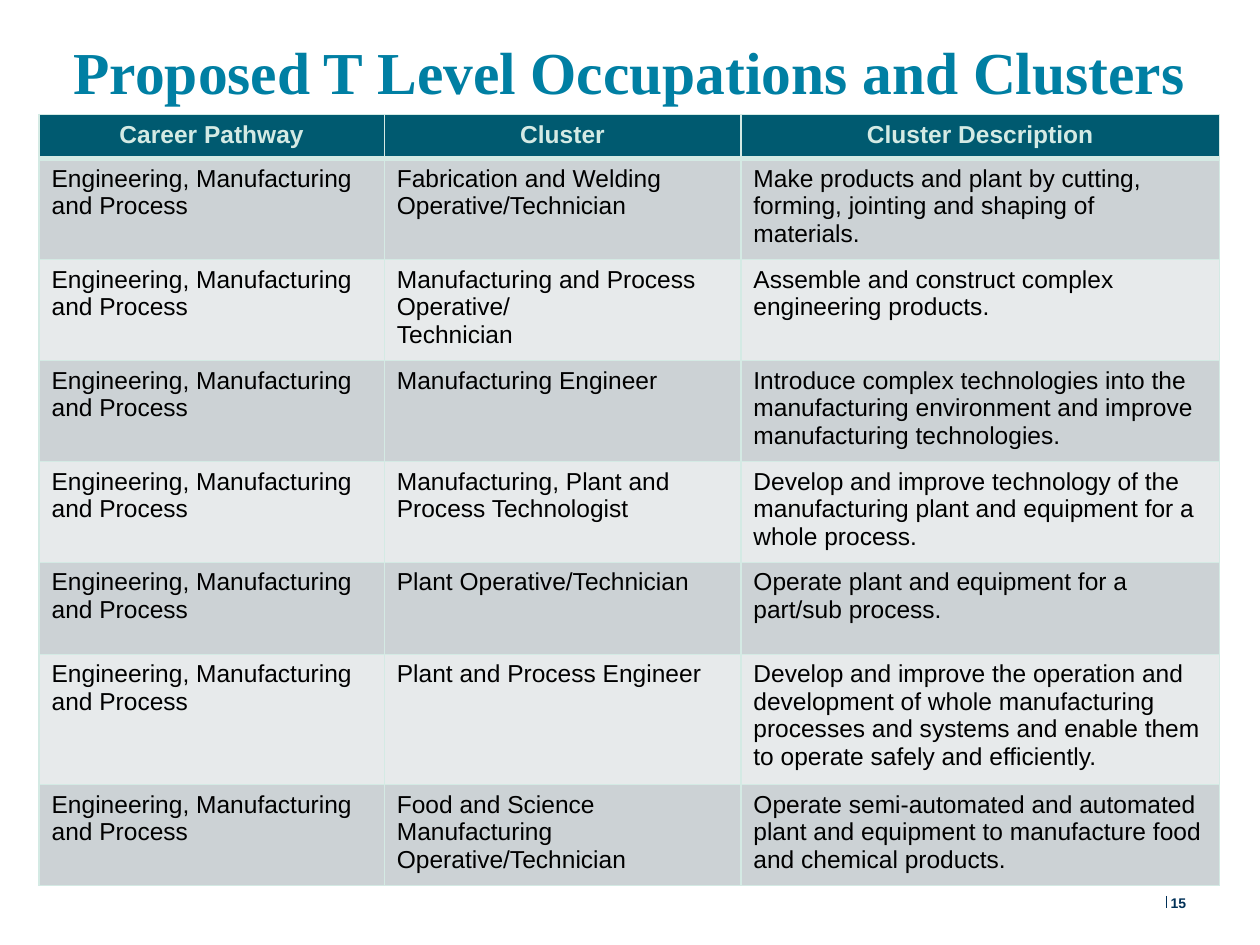
from lxml.etree import SubElement
from pptx import Presentation
from pptx.dml.color import RGBColor
from pptx.enum.shapes import MSO_CONNECTOR as Connector
from pptx.enum.text import MSO_ANCHOR as Anchor, MSO_AUTO_SIZE as AutoSize, PP_ALIGN as Align
from pptx.oxml.ns import qn
from pptx.util import Inches, Pt

TITLE = "Proposed T Level Occupations and Clusters"
PAGE_NUMBER = "15"
HEADERS = ("Career Pathway", "Cluster", "Cluster Description")
PATHWAY = "Engineering, Manufacturing and Process"
CLUSTERS = [
    ("Fabrication and Welding Operative/Technician",
     "Make products and plant by cutting, forming, jointing and shaping of materials."),
    ("Manufacturing and Process Operative/\nTechnician",
     "Assemble and construct complex engineering products."),
    ("Manufacturing Engineer",
     "Introduce complex technologies into the manufacturing environment and improve "
     "manufacturing technologies."),
    ("Manufacturing, Plant and Process Technologist",
     "Develop and improve technology of the manufacturing plant and equipment for a "
     "whole process."),
    ("Plant Operative/Technician",
     "Operate plant and equipment for a part/sub process."),
    ("Plant and Process Engineer",
     "Develop and improve the operation and development of whole manufacturing "
     "processes and systems and enable them to operate safely and efficiently."),
    ("Food and Science Manufacturing Operative/Technician",
     "Operate semi-automated and automated plant and equipment to manufacture food "
     "and chemical products."),
]
COLUMN_WIDTHS = (2.74, 2.83, 3.8)
ROW_HEIGHTS = (0.35, 0.69, 0.79, 0.79, 0.79, 0.73, 1.02, 0.73)
COLORS = {
    "title": "007FA3", "navy": "003057", "header": "005A70", "mint": "D4EAE4",
    "dark band": "CCD2D5", "light band": "E7EAEB", "text": "000000",
}


def color(name):
    """Return the named palette colour."""
    return RGBColor.from_string(COLORS[name])


def write(frame, text, size=14, font="Arial", ink="text", bold=False,
          align=Align.LEFT, spacing=None):
    """Fill a text frame with formatted text, one paragraph per line."""
    frame.text = text
    frame.word_wrap = True
    for para in frame.paragraphs:
        para.alignment = align
        if spacing:
            para.line_spacing = spacing
        for span in para.runs:
            span.font.name = font
            span.font.size = Pt(size)
            span.font.bold = bold
            span.font.color.rgb = color(ink)
        SubElement(para._p, qn("a:endParaRPr"), sz=str(size * 100))


def set_margins(frame, horizontal, vertical):
    """Give a text frame its margins in inches."""
    frame.margin_left = frame.margin_right = Inches(horizontal)
    frame.margin_top = frame.margin_bottom = Inches(vertical)


def set_borders(cell, widths):
    """Draw mint borders of the given point widths by side."""
    properties = cell._tc.get_or_add_tcPr()
    for side, width in widths.items():
        line = SubElement(properties, qn(f"a:ln{side}"), w=str(Pt(width)))
        fill = SubElement(line, qn("a:solidFill"))
        SubElement(fill, qn("a:srgbClr"), val=COLORS["mint"])


def add_cluster_table(page):
    """Add the table of career pathways and clusters."""
    rows = [HEADERS] + [(PATHWAY, *cluster) for cluster in CLUSTERS]
    table = page.shapes.add_table(
        len(rows), len(HEADERS), Inches(0.31), Inches(0.91),
        Inches(sum(COLUMN_WIDTHS)), Inches(sum(ROW_HEIGHTS))).table
    for column, width in zip(table.columns, COLUMN_WIDTHS):
        column.width = Inches(width)
    for index, (values, height) in enumerate(zip(rows, ROW_HEIGHTS)):
        table.rows[index].height = Inches(height)
        band = "header" if index == 0 else "dark band" if index % 2 else "light band"
        style = dict(ink="mint", bold=True, align=Align.CENTER) if index == 0 else {}
        top, bottom = {0: (1, 3), 1: (3, 1)}.get(index, (1, 1))
        for cell, text in zip(table.rows[index].cells, values):
            write(cell.text_frame, text, **style)
            set_borders(cell, {"L": 1, "R": 1, "T": top, "B": bottom})
            cell.fill.solid()
            cell.fill.fore_color.rgb = color(band)


def main():
    """Build the T Level clusters slide."""
    deck = Presentation()
    deck.slide_width, deck.slide_height = Inches(10), Inches(7.5)
    page = deck.slides.add_slide(deck.slide_layouts[5])

    title = page.shapes.title
    title.left, title.top = Inches(0.31), Inches(0.15)
    title.width, title.height = Inches(9.37), Inches(0.72)
    write(title.text_frame, TITLE, size=34, font="Times New Roman", ink="title",
          bold=True, align=Align.CENTER, spacing=1.18)
    set_margins(title.text_frame, 0.1, 0.05)
    title.text_frame.auto_size = AutoSize.NONE
    title.text_frame.vertical_anchor = Anchor.MIDDLE

    divider = page.shapes.add_connector(
        Connector.STRAIGHT, Inches(9.26), Inches(7.11), Inches(9.26), Inches(7.21))
    divider.line.color.rgb = color("navy")
    divider.line.width = Pt(0.75)
    SubElement(divider._element.spPr, qn("a:effectLst"))

    number = page.shapes.add_textbox(
        Inches(9.29), Inches(7.1), Inches(0.47), Inches(0.14))
    write(number.text_frame, PAGE_NUMBER, size=8, ink="navy", bold=True)
    set_margins(number.text_frame, 0, 0)
    number.text_frame.vertical_anchor = Anchor.MIDDLE

    add_cluster_table(page)
    deck.save("out.pptx")


if __name__ == "__main__":
    main()
